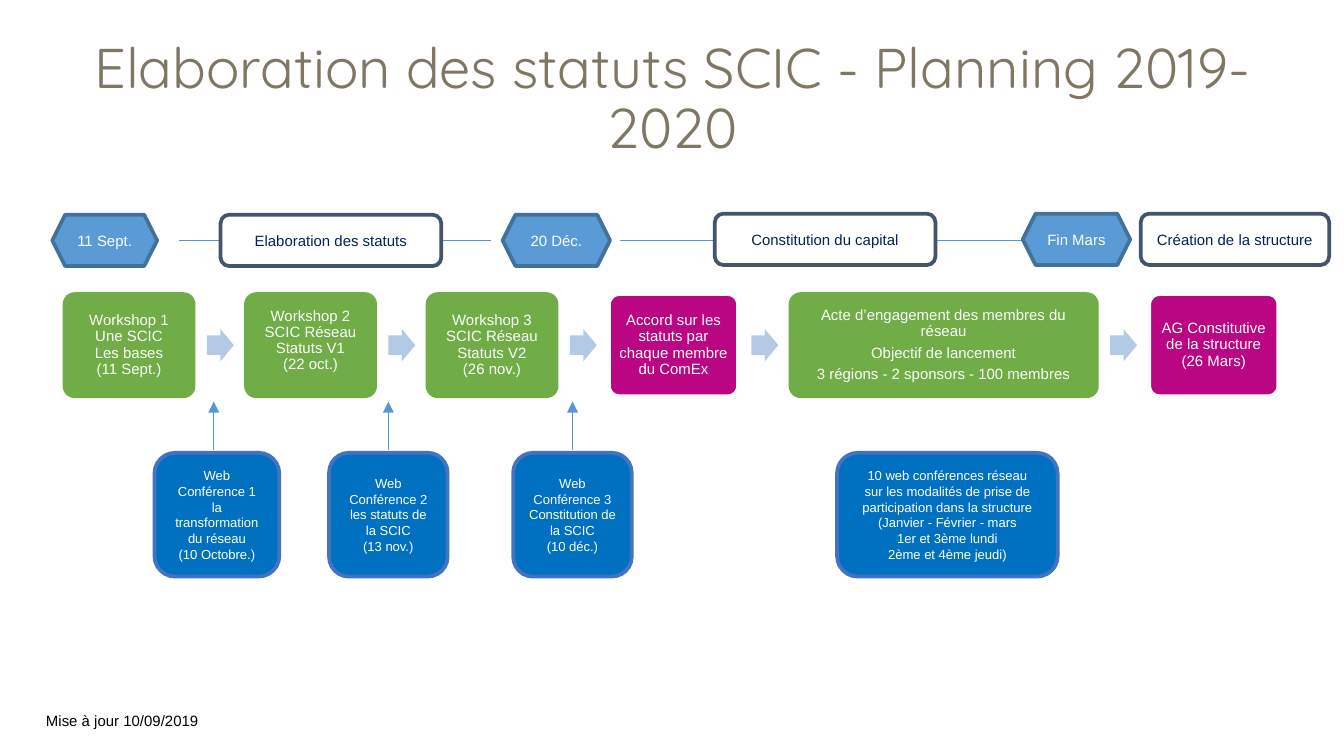
from dataclasses import dataclass

from lxml.etree import SubElement
from pptx import Presentation
from pptx.dml.color import RGBColor
from pptx.enum.shapes import MSO_CONNECTOR, MSO_SHAPE as Shape
from pptx.enum.text import MSO_ANCHOR as Anchor, PP_ALIGN as Align
from pptx.oxml.ns import qn
from pptx.util import Cm, Pt


@dataclass(frozen=True)
class Theme:
    heading_font: str = "Quicksand"
    body_font: str = "Arial"
    heading_size: float = 30
    label_size: float = 8
    detail_size: float = 7
    heading: str = "7F7664"
    ink: str = "000000"
    navy: str = "002060"
    white: str = "FFFFFF"
    date: str = "5B9BD5"
    date_edge: str = "42719B"
    frame: str = "44546A"
    thread: str = "5597D3"
    workshop: str = "70AD47"
    decision: str = "BA0682"
    arrow: str = "B3CAE7"
    web: str = "0070C0"
    web_edge: str = "4472C4"


theme = Theme()
rgb = RGBColor.from_string


def write(box, paragraphs, size, color, font=theme.body_font, align=Align.CENTER,
          anchor=Anchor.MIDDLE, insets=(0.18, 0.1, 0.18, 0.1), leading=None, gap=0):
    frame = box.text_frame
    frame.word_wrap = True
    frame.vertical_anchor = anchor
    (frame.margin_left, frame.margin_top,
     frame.margin_right, frame.margin_bottom) = map(Cm, insets)
    for i, text in enumerate(paragraphs):
        paragraph = frame.add_paragraph() if i else frame.paragraphs[0]
        paragraph.alignment = align
        if leading:
            paragraph.line_spacing = leading
        if i and gap:
            paragraph.space_before = Pt(gap)
        run = paragraph.add_run()
        run.text = text
        run.font.name, run.font.size = font, Pt(size)
        run.font.color.rgb = rgb(color)


def block(kind, left, top, width, height, fill, edge=None, adjust=None):
    shape = slide.shapes.add_shape(kind, Cm(left), Cm(top), Cm(width), Cm(height))
    shape.shadow.inherit = False
    shape.fill.solid()
    shape.fill.fore_color.rgb = rgb(fill)
    if edge:
        shape.line.color.rgb = rgb(edge)
        shape.line.width = Pt(2)
    else:
        shape.line.fill.background()
    if adjust:
        shape.adjustments[0] = adjust
    return shape


deck = Presentation()
deck.slide_width, deck.slide_height = Cm(25.4), Cm(14.29)
slide = deck.slides.add_slide(deck.slide_layouts[6])

# Title and update note
title = slide.shapes.add_textbox(Cm(0.43), Cm(0.51), Cm(24.56), Cm(2.77))
write(title, ["Elaboration des statuts SCIC - Planning 2019-2020"], theme.heading_size,
      theme.heading, theme.heading_font, leading=0.9)
update = slide.shapes.add_textbox(Cm(0.69), Cm(13.28), Cm(3.81), Cm(0.71))
write(update, ["Mise à jour 10/09/2019"], theme.label_size, theme.ink,
      align=Align.LEFT, anchor=Anchor.TOP, insets=(0.18,) * 4)

# Timeline threads, then the arrows rising from the web conferences
threads = [(3.38, 4.55, 9.27, 4.55, False), (11.71, 4.55, 19.35, 4.55, False)]
threads += [(x, 8.51, x, 7.59, True) for x in (4.04, 7.34, 10.82)]
for x1, y1, x2, y2, pointed in threads:
    thread = slide.shapes.add_connector(MSO_CONNECTOR.STRAIGHT, Cm(x1), Cm(y1), Cm(x2), Cm(y2))
    thread.line.color.rgb = rgb(theme.thread)
    thread.line.width = Pt(0.75)
    if pointed:
        SubElement(thread.line._get_or_add_ln(), qn("a:tailEnd"), type="triangle")
    SubElement(thread._element.spPr, qn("a:effectLst"))

# Timeline dates
for left, top, width, date in [(0.99, 4.06, 1.98, "11 Sept."), (9.5, 4.06, 2.03, "20 Déc."),
                               (19.33, 4.04, 2.03, "Fin Mars")]:
    hexagon = block(Shape.HEXAGON, left, top, width, 0.97, theme.date, theme.date_edge, 0.25)
    write(hexagon, [date], theme.label_size, theme.white)

# Timeline phases
for left, top, width, phase in [(4.17, 4.06, 4.17, "Elaboration des statuts"),
                                (13.51, 4.04, 4.17, "Constitution du capital"),
                                (21.56, 4.04, 3.56, "Création de la structure")]:
    phase_frame = block(Shape.ROUNDED_RECTANGLE, left, top, width, 0.97,
                        theme.white, theme.frame)
    write(phase_frame, [phase], theme.label_size, theme.navy)

# Process steps: width, is a decision, bottom inset, paragraph gap, text
steps = [
    (2.44, False, 0.18, 0, ["Workshop 1", "Une SCIC", "Les bases", "(11 Sept.)"]),
    (2.44, False, 0.36, 0, ["Workshop 2 SCIC Réseau Statuts V1", "(22 oct.)"]),
    (2.44, False, 0.18, 0, ["Workshop 3 SCIC Réseau", "Statuts V2", "(26 nov.)"]),
    (2.44, True, 0.1, 0, ["Accord sur les statuts par chaque membre du ComEx"]),
    (5.79, False, 0.18, 3, ["Acte d’engagement des membres du réseau", "Objectif de lancement",
                            "3 régions - 2 sponsors - 100 membres"]),
    (2.44, True, 0.1, 0, ["AG Constitutive de la structure", "(26 Mars)"]),
]
step_gap, arrow_offset = 0.99, 0.25
left = 1.22
for i, (width, decision, bottom, gap, text) in enumerate(steps):
    fill, edge = ((theme.decision, theme.white) if decision
                  else (theme.workshop, theme.workshop))
    side = 0.08 if decision else 0.18
    step = block(Shape.ROUNDED_RECTANGLE, left, 5.56, width, 1.93, fill, edge, 0.1)
    write(step, text, theme.label_size, theme.white,
          insets=(side, min(bottom, 0.18), side, bottom), leading=0.9, gap=gap)
    left += width
    if i < len(steps) - 1:
        block(Shape.RIGHT_ARROW, left + arrow_offset, 6.22, 0.51, 0.61,
              theme.arrow).adjustments[0] = 0.6
    left += step_gap

# Web conferences
conferences = [
    (2.92, 2.36, ["Web Conférence 1", "la transformation du réseau", "(10 Octobre.)"]),
    (6.22, 2.24, ["Web Conférence 2", "les statuts de la SCIC", "(13 nov.)"]),
    (9.7, 2.24, ["Web Conférence 3", "Constitution de la SCIC", "(10 déc.)"]),
    (15.82, 4.17, ["10 web conférences réseau",
                   "sur les modalités de prise de participation dans la structure",
                   "(Janvier - Février - mars", "1er et 3ème lundi", "2ème et 4ème jeudi)"]),
]
for left, width, text in conferences:
    conference = block(Shape.ROUNDED_RECTANGLE, left, 8.56, width, 2.34,
                       theme.web, theme.web_edge)
    write(conference, text, theme.detail_size, theme.white)

deck.save("out.pptx")
